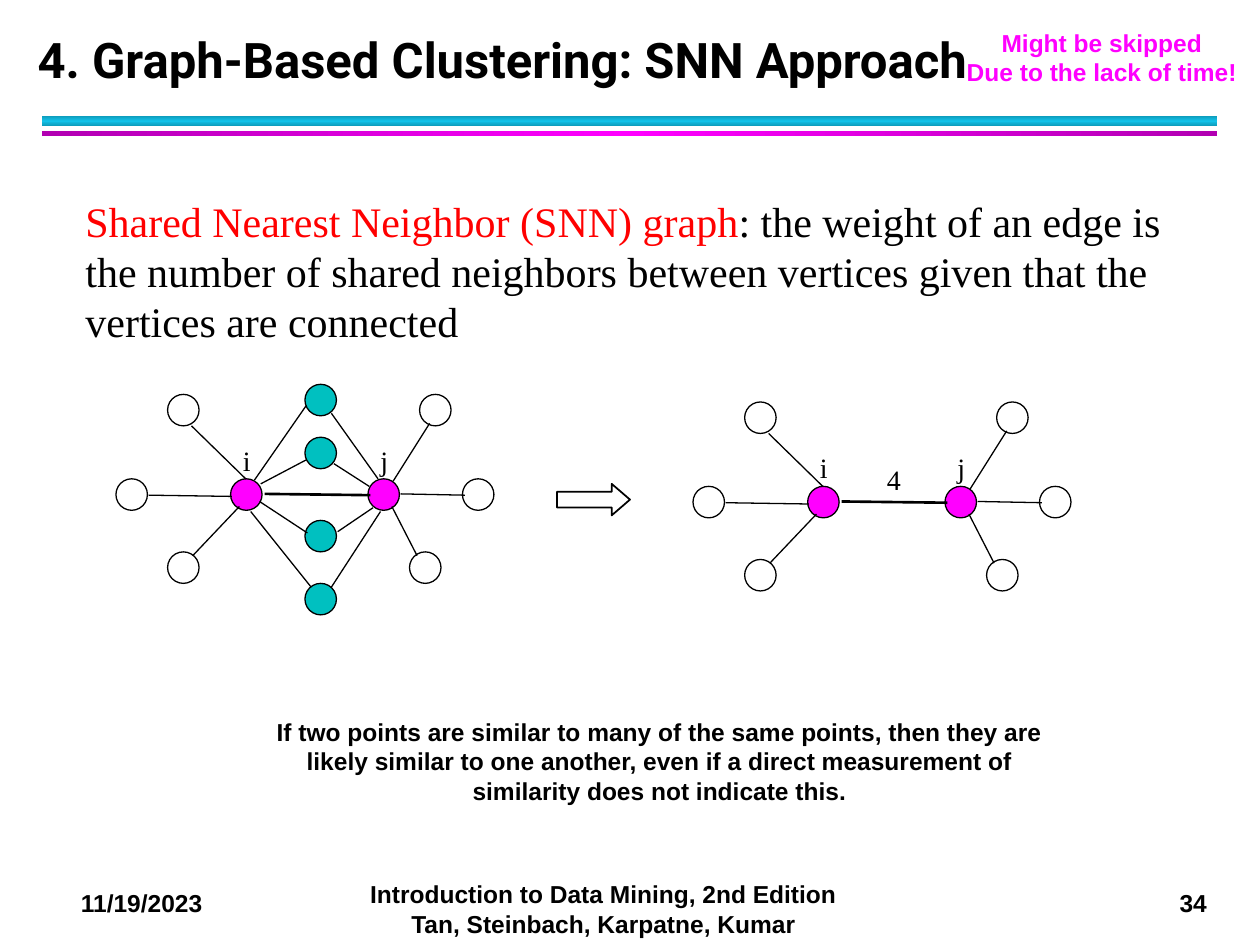
import copy
from dataclasses import dataclass

import pptx
import pptx.dml.color
import pptx.enum.shapes
import pptx.enum.text
import pptx.oxml
import pptx.oxml.ns
import pptx.util

Inches = pptx.util.Inches
Pt = pptx.util.Pt
RGB = pptx.dml.color.RGBColor.from_string
SHAPE = pptx.enum.shapes.MSO_SHAPE
ALIGN = pptx.enum.text.PP_ALIGN
ANCHOR = pptx.enum.text.MSO_ANCHOR
AUTO = pptx.enum.text.MSO_AUTO_SIZE


@dataclass(frozen=True)
class Theme:
    black: str = "000000"
    red: str = "FF0000"
    magenta: str = "FF00FF"
    dark_magenta: str = "B200B2"
    teal: str = "00C0C0"
    cyan: str = "12C2E9"
    dark_cyan: str = "0E9BBA"
    sans: str = "Arial"
    serif: str = "Times New Roman"
    heading: str = "Roboto"
    title_size: int = 28
    body_size: int = 24
    label_size: int = 16
    note_size: int = 14
    thin: float = 0.75
    thick: float = 1.5


T = Theme()
NOTE = {"name": T.sans, "size": Pt(T.note_size), "bold": True}
LABEL = {"name": T.serif, "size": Pt(T.label_size)}
BODY = {"name": T.serif, "size": Pt(T.body_size)}
TITLE = {"name": T.heading, "size": Pt(T.title_size), "bold": True}


@dataclass(frozen=True)
class Run:
    text: str
    color: str = T.black


@dataclass(frozen=True)
class Node:
    x: float
    y: float
    fill: str | None = None


@dataclass(frozen=True)
class Edge:
    x1: float
    y1: float
    x2: float
    y2: float
    weight: float = T.thin


@dataclass(frozen=True)
class Label:
    text: str
    x: float
    y: float
    width: float = 0.33


NODE_SIZE = 0.25
ENDPOINTS = [Node(1.83, 3.8, T.magenta), Node(2.92, 3.8, T.magenta)]
SHARED = [Node(2.42, y, T.teal) for y in (3.05, 3.47, 4.13, 4.63)]
OUTER = [Node(1.33, 4.38), Node(0.92, 3.8), Node(1.33, 3.13),
         Node(3.33, 3.13), Node(3.25, 4.38), Node(3.67, 3.8)]
LABELS = [Label("i", 1.83, 3.47), Label("j", 2.92, 3.47)]
OUTER_EDGES = [
    Edge(1.53, 4.41, 1.9, 4.02), Edge(1.18, 3.93, 1.84, 3.94),
    Edge(1.52, 3.38, 1.95, 3.8), Edge(2.1, 3.92, 2.94, 3.93, T.thick),
    Edge(3.18, 3.92, 3.69, 3.93), Edge(3.31, 4.41, 3.11, 4.02),
    Edge(3.12, 3.82, 3.41, 3.36),
]
SHARED_EDGES = [
    Edge(2.07, 3.84, 2.43, 3.65), Edge(2.06, 3.98, 2.44, 4.23),
    Edge(2.47, 4.66, 1.99, 4.06), Edge(2.02, 3.81, 2.43, 3.22),
    Edge(2.68, 4.22, 2.96, 4.03), Edge(2.63, 4.66, 3.02, 4.06),
    Edge(2.93, 3.86, 2.65, 3.68), Edge(3, 3.8, 2.63, 3.28),
]


def add_shape(shapes, kind, box: tuple, fill: str | None = None, weight: float = 0):
    """Add a preset shape; no fill colour or zero weight leaves that part empty."""
    sp = shapes.add_shape(kind, *map(Inches, box))
    sp.shadow.inherit = False
    if fill:
        sp.fill.solid()
        sp.fill.fore_color.rgb = RGB(fill)
    else:
        sp.fill.background()
    if weight:
        sp.line.color.rgb = RGB(T.black)
        sp.line.width = Pt(weight)
    else:
        sp.line.fill.background()
    return sp


def add_text(shapes, box: tuple, paragraphs: list[list[Run]], font: dict,
             align=ALIGN.LEFT, wrap: bool = True):
    tb = shapes.add_textbox(*map(Inches, box))
    tf = tb.text_frame
    tf.word_wrap = wrap
    tf.auto_size = AUTO.SHAPE_TO_FIT_TEXT
    for i, runs in enumerate(paragraphs):
        p = tf.add_paragraph() if i else tf.paragraphs[0]
        p.alignment = align
        for run in runs:
            r = p.add_run()
            r.text = run.text
            r.font.color.rgb = RGB(run.color)
            for name, value in font.items():
                setattr(r.font, name, value)
    return tf


def add_edge(shapes, edge: Edge, dx: float, dy: float) -> None:
    ln = shapes.add_connector(
        pptx.enum.shapes.MSO_CONNECTOR.STRAIGHT,
        Inches(edge.x1 + dx), Inches(edge.y1 + dy),
        Inches(edge.x2 + dx), Inches(edge.y2 + dy))
    ln.line.color.rgb = RGB(T.black)
    ln.line.width = Pt(edge.weight)
    ln._element.spPr.append(pptx.oxml.parse_xml(
        f'<a:effectLst {pptx.oxml.ns.nsdecls("a")}/>'))


def add_graph(s, nodes: list[Node], edges: list[Edge], labels: list[Label],
              dx: float = 0, dy: float = 0) -> None:
    """Draw one grouped graph, moved by dx and dy."""
    shapes = s.shapes.add_group_shape().shapes
    for n in nodes:
        add_shape(shapes, SHAPE.OVAL, (n.x + dx, n.y + dy, NODE_SIZE, NODE_SIZE),
                  n.fill, T.thin)
    for lb in labels:
        add_text(shapes, (lb.x + dx, lb.y + dy, lb.width, 0.37),
                 [[Run(lb.text)]], LABEL)
    for e in edges:
        add_edge(shapes, e, dx, dy)


def add_gradient_bar(shapes, box: tuple, edge: str, middle: str, angle: int) -> None:
    sp = add_shape(shapes, SHAPE.RECTANGLE, box)
    sp.fill.gradient()
    sp.fill.gradient_angle = angle
    stops = sp._element.spPr.find(".//" + pptx.oxml.ns.qn("a:gsLst"))
    stops.insert(1, copy.deepcopy(stops[0]))
    for stop, color, pos in zip(sp.fill.gradient_stops, (edge, middle, edge), (0, 0.5, 1)):
        stop.color.rgb = RGB(color)
        stop.position = pos


def main() -> None:
    prs = pptx.Presentation()
    prs.slide_width, prs.slide_height = Inches(10), Inches(7.5)
    s = prs.slides.add_slide(prs.slide_layouts[6])

    bars = s.shapes.add_group_shape().shapes
    add_gradient_bar(bars, (0.33, 0.92, 9.33, 0.08), T.dark_cyan, T.cyan, 90)
    add_gradient_bar(bars, (0.33, 1.04, 9.33, 0.04), T.dark_magenta, T.magenta, 0)

    add_text(s.shapes, (0.46, 7, 1.33, 0.34), [[Run("11/19/2023")]], NOTE, ALIGN.CENTER)
    add_text(s.shapes, (9.25, 7, 0.44, 0.34), [[Run("34")]], NOTE, ALIGN.CENTER, False)
    add_text(s.shapes, (2.75, 6.93, 4.08, 0.57), [[Run(
        "Introduction to Data Mining, 2nd Edition Tan, Steinbach, Karpatne, Kumar")]],
        NOTE, ALIGN.CENTER)

    add_graph(s, ENDPOINTS + SHARED + OUTER, OUTER_EDGES + SHARED_EDGES, LABELS)
    add_graph(s, ENDPOINTS + OUTER, OUTER_EDGES,
              LABELS + [Label("4", 2.36, 3.56, 0.37)], 4.58, 0.06)
    arrow = add_shape(s.shapes, SHAPE.RIGHT_ARROW, (4.42, 3.84, 0.58, 0.25), weight=1)
    arrow.adjustments[1] = 0.58

    add_text(s.shapes, (0.58, 1.5, 8.83, 1.3), [[
        Run("Shared Nearest Neighbor (SNN) graph", T.red),
        Run(": the weight of an edge is the number of shared neighbors between "
            "vertices given that the vertices are connected")]], BODY)
    tf = add_text(s.shapes, (0.2, 0.17, 9.45, 0.58),
                  [[Run("4. Graph-Based Clustering: SNN Approach")]], TITLE)
    tf.auto_size = AUTO.NONE
    tf.vertical_anchor = ANCHOR.BOTTOM
    tf.paragraphs[0].line_spacing = Pt(36)
    add_text(s.shapes, (2, 5.64, 6.47, 0.81), [[Run(
        "If two points are similar to many of the same points, then they are likely "
        "similar to one another, even if a direct measurement of similarity does not "
        "indicate this.")]], NOTE, ALIGN.CENTER)
    add_text(s.shapes, (7.57, 0.17, 2.35, 0.57),
             [[Run("Might be skipped", T.magenta)],
              [Run("Due to the lack of time!", T.magenta)]], NOTE, ALIGN.CENTER, False)
    prs.save("out.pptx")


if __name__ == "__main__":
    main()
